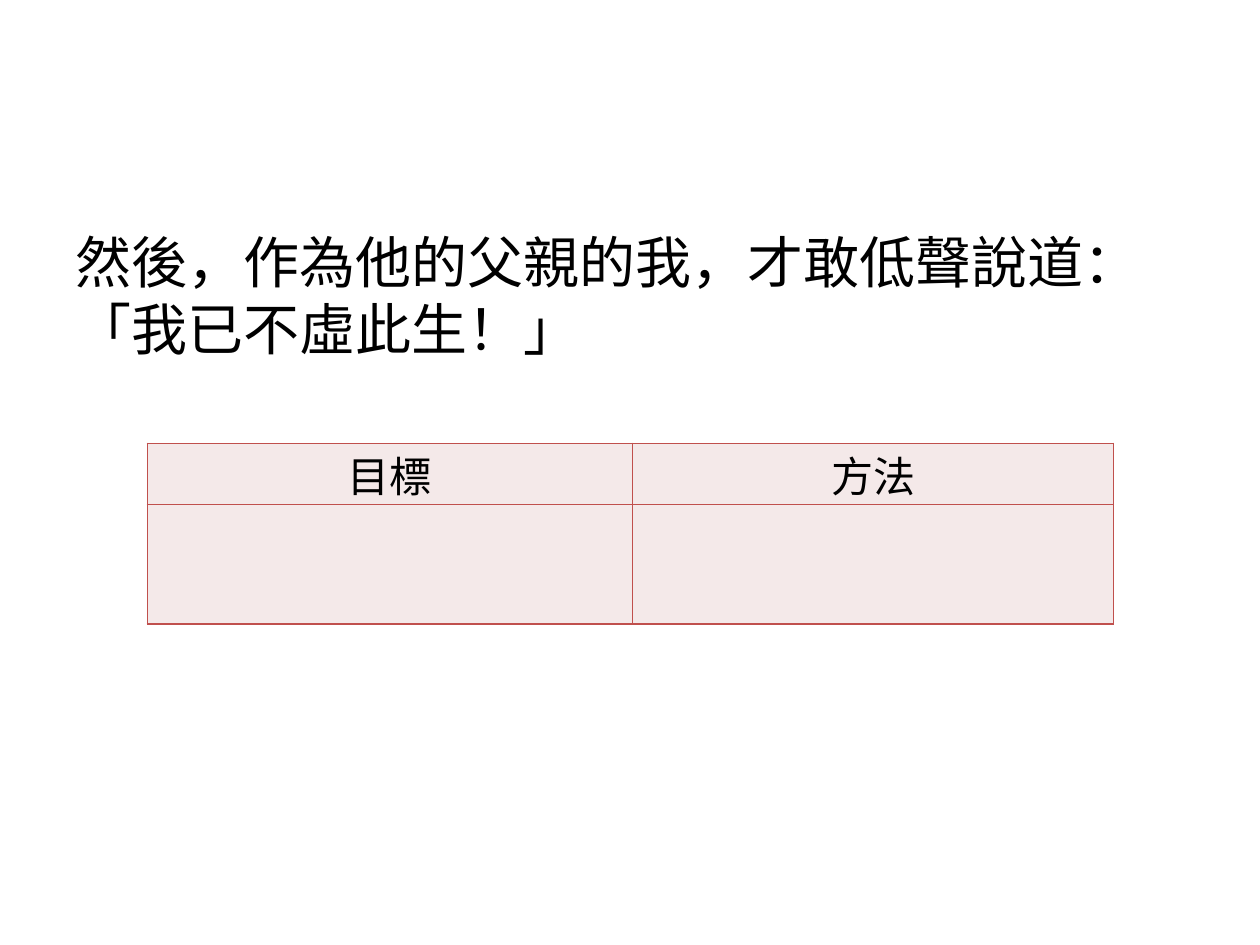
"""Build a slide with a closing quotation and a goals and methods table."""
from lxml.etree import SubElement
from pptx import Presentation
from pptx.dml.color import RGBColor as Color
from pptx.enum.text import PP_ALIGN as Align
from pptx.oxml import parse_xml
from pptx.oxml.ns import nsdecls, qn
from pptx.util import Cm, Pt

QUOTE = "然後，作為他的父親的我，才敢低聲說道：「我已不虛此生！」"
ROWS = [("目標", "方法"), ("", "")]
COLUMN_WIDTHS = (9.78, 9.7)
ROW_HEIGHTS = (1.2, 2.41)
QUOTE_AREA = (1.27, 4.45, 22.86, 12.57)
TABLE_ORIGIN = (2.97, 8.94)

THEME = {
    "text": "000000", "cell": "F4E9E9", "border": "C0504D", "border_width": 1,
    "quote_size": 32, "table_size": 24,
    "quote_font": "Noto Sans CJK SC", "table_font": "Calibri",
}


def write(frame, text, *, size, font, align=Align.LEFT):
    para = frame.paragraphs[0]
    para.alignment = align
    para.space_before = Pt(0)
    span = para.add_run()
    span.text = text
    span.font.size = Pt(size)
    span.font.name = font
    span.font.color.rgb = Color.from_string(THEME["text"])
    SubElement(span.font._element, qn("a:ea"), typeface=THEME["quote_font"])


def style_cell(cell):
    cell.margin_left = cell.margin_right = Cm(0.05)
    cell.margin_top = cell.margin_bottom = 0
    cell.fill.solid()
    cell.fill.fore_color.rgb = Color.from_string(THEME["cell"])
    properties = cell._tc.get_or_add_tcPr()
    for index, side in enumerate("LRTB"):
        properties.insert(index, parse_xml(
            f'<a:ln{side} {nsdecls("a")} w="{Pt(THEME["border_width"])}"><a:solidFill>'
            f'<a:srgbClr val="{THEME["border"]}"/></a:solidFill></a:ln{side}>'))


def add_quote(page):
    box = page.placeholders[1]
    box.left, box.top, box.width, box.height = map(Cm, QUOTE_AREA)
    properties = box.text_frame.paragraphs[0]._p.get_or_add_pPr()
    properties.set("marL", "0")
    properties.set("indent", "0")
    SubElement(properties, qn("a:buNone"))
    write(box.text_frame, QUOTE, size=THEME["quote_size"], font=THEME["quote_font"])


def add_goals_table(page):
    left, top = map(Cm, TABLE_ORIGIN)
    table = page.shapes.add_table(
        len(ROWS), len(COLUMN_WIDTHS), left, top,
        Cm(sum(COLUMN_WIDTHS)), Cm(sum(ROW_HEIGHTS))).table
    table.first_row = table.horz_banding = False
    for column, width in zip(table.columns, COLUMN_WIDTHS):
        column.width = Cm(width)
    for row, height, texts in zip(table.rows, ROW_HEIGHTS, ROWS):
        row.height = Cm(height)
        for cell, text in zip(row.cells, texts):
            style_cell(cell)
            if text:
                write(cell.text_frame, text, size=THEME["table_size"],
                      font=THEME["table_font"], align=Align.CENTER)


def main():
    deck = Presentation()
    deck.slide_width, deck.slide_height = Cm(25.4), Cm(19.05)
    page = deck.slides.add_slide(deck.slide_layouts[1])
    title = page.shapes.title._element
    title.getparent().remove(title)
    add_quote(page)
    add_goals_table(page)
    deck.save("out.pptx")


if __name__ == "__main__":
    main()
